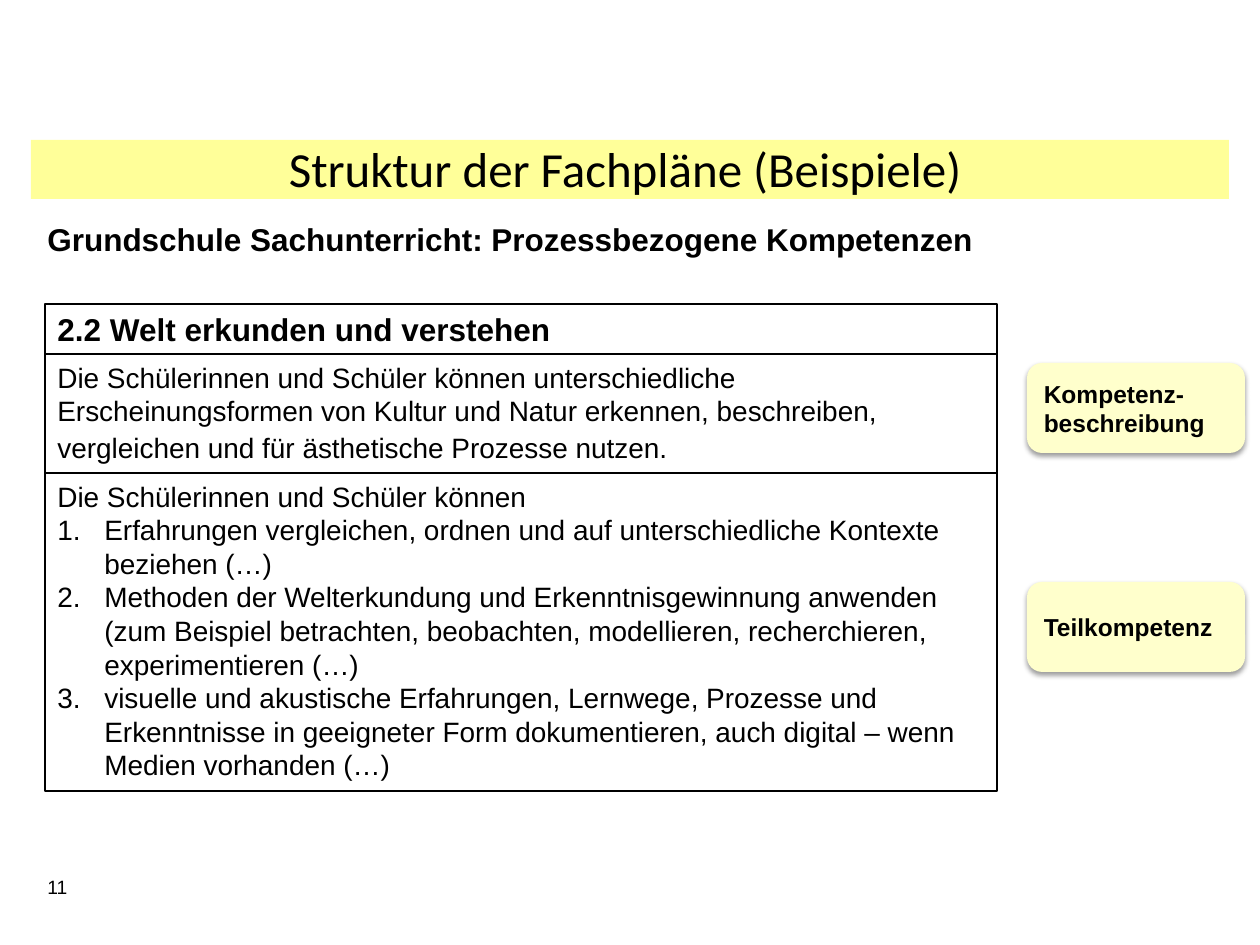
from lxml import etree
from pptx import Presentation, util as u
from pptx.dml.color import RGBColor
from pptx.enum import shapes, text
from pptx.oxml.ns import qn

BLACK = RGBColor(0x00, 0x00, 0x00)
BAND_YELLOW = RGBColor(0xFF, 0xFF, 0x99)
LABEL_YELLOW = RGBColor(0xFF, 0xFF, 0xCC)
EMU_PER_PX = 914400 / 126

TITLE = "Struktur der Fachpläne (Beispiele)"
SUBTITLE = "Grundschule Sachunterricht: Prozessbezogene Kompetenzen"
PAGE_NUMBER = "11"
HEADING = "2.2 Welt erkunden und verstehen"
DESCRIPTION = (
    "Die Schülerinnen und Schüler können unterschiedliche Erscheinungsformen von Kultur "
    "und Natur erkennen, beschreiben, vergleichen und für ästhetische Prozesse nutzen."
)
INTRO = "Die Schülerinnen und Schüler können"
PARTIAL_SKILLS = [
    "Erfahrungen vergleichen, ordnen und auf unterschiedliche Kontexte beziehen (…)",
    "Methoden der Welterkundung und Erkenntnisgewinnung anwenden (zum Beispiel betrachten, "
    "beobachten, modellieren, recherchieren, experimentieren (…)",
    "visuelle und akustische Erfahrungen, Lernwege, Prozesse und Erkenntnisse in geeigneter "
    "Form dokumentieren, auch digital – wenn Medien vorhanden (…)",
]
# paragraphs, height, size, bold
PANELS = [
    ([HEADING], 50, 18, True),
    ([DESCRIPTION], 119, 16, False),
    ([INTRO, *PARTIAL_SKILLS], 318, 16, False),
]
PANEL_LEFT, PANEL_TOP, PANEL_WIDTH = 45, 304, 952
LABELS = [("Teilkompetenz", 582), ("Kompetenz-beschreibung", 363)]  # text, top
LABEL_LEFT, LABEL_WIDTH, LABEL_HEIGHT = 1027, 218, 90
NUMBER_INDENT = 47


def px(length):
    return u.Emu(round(length * EMU_PER_PX))


def write(shape, paragraphs, size, bold=False, font="Arial", align=text.PP_ALIGN.LEFT,
          anchor=text.MSO_ANCHOR.TOP, grow=True):
    frame = shape.text_frame
    frame.word_wrap = True
    frame.vertical_anchor = anchor
    if grow:
        frame.auto_size = text.MSO_AUTO_SIZE.SHAPE_TO_FIT_TEXT
    frame.text = "\n".join(paragraphs)
    for paragraph in frame.paragraphs:
        paragraph.alignment = align
        paragraph.font.size = u.Pt(size)
        paragraph.font.bold = bold
        paragraph.font.name = font
        paragraph.font.color.rgb = BLACK
    return frame


def add_text(slide, box, content, size, **style):
    write(slide.shapes.add_textbox(*map(px, box)), [content], size, **style)


def add_box(slide, kind, box, fill=None):
    shape = slide.shapes.add_shape(kind, *map(px, box))
    shape.shadow.inherit = False
    if fill is None:
        shape.fill.background()
        shape.line.color.rgb = BLACK
        shape.line.width = u.Pt(0.75)
    else:
        shape.fill.solid()
        shape.fill.fore_color.rgb = fill
        shape.line.fill.background()
    return shape


def number(paragraph):
    properties = paragraph._p.get_or_add_pPr()
    properties.set("marL", str(px(NUMBER_INDENT)))
    properties.set("indent", str(-px(NUMBER_INDENT)))
    bullet = etree.Element(qn("a:buAutoNum"), type="arabicPeriod")
    properties.insert(0, bullet)


def add_shadow(shape):
    effects = shape._element.spPr.find(qn("a:effectLst"))
    shadow = etree.SubElement(effects, qn("a:outerShdw"), blurRad=str(u.Pt(3.1)),
                              dist=str(u.Pt(1.6)), dir="5400000", rotWithShape="0")
    color = etree.SubElement(shadow, qn("a:srgbClr"), val=str(BLACK))
    etree.SubElement(color, qn("a:alpha"), val="38000")


def add_panels(slide):
    top = PANEL_TOP
    for paragraphs, height, size, bold in PANELS:
        panel = add_box(slide, shapes.MSO_SHAPE.RECTANGLE,
                        (PANEL_LEFT, top, PANEL_WIDTH, height))
        frame = write(panel, paragraphs, size, bold)
        for paragraph in frame.paragraphs[1:]:
            number(paragraph)
        if paragraphs == [DESCRIPTION]:
            tab = frame.paragraphs[0].add_run()
            tab.text = "\t"
            tab.font.size = u.Pt(18)
        top += height


def add_labels(slide):
    for content, top in LABELS:
        label = add_box(slide, shapes.MSO_SHAPE.ROUNDED_RECTANGLE,
                        (LABEL_LEFT, top, LABEL_WIDTH, LABEL_HEIGHT), LABEL_YELLOW)
        add_shadow(label)
        write(label, [content], 14, bold=True, anchor=text.MSO_ANCHOR.MIDDLE, grow=False)


def main():
    deck = Presentation()
    deck.slide_width, deck.slide_height = px(1260), px(945)
    slide = deck.slides.add_slide(deck.slide_layouts[6])
    add_box(slide, shapes.MSO_SHAPE.RECTANGLE, (31, 140, 1198, 59), BAND_YELLOW)
    add_text(slide, (26, 132, 1198, 72), TITLE, 28, font="Calibri",
             align=text.PP_ALIGN.CENTER)
    add_text(slide, (35, 214, 1225, 50), SUBTITLE, 18, bold=True)
    add_panels(slide)
    add_labels(slide)
    add_text(slide, (35, 869, 69, 36), PAGE_NUMBER, 11)
    deck.save("out.pptx")


if __name__ == "__main__":
    main()
